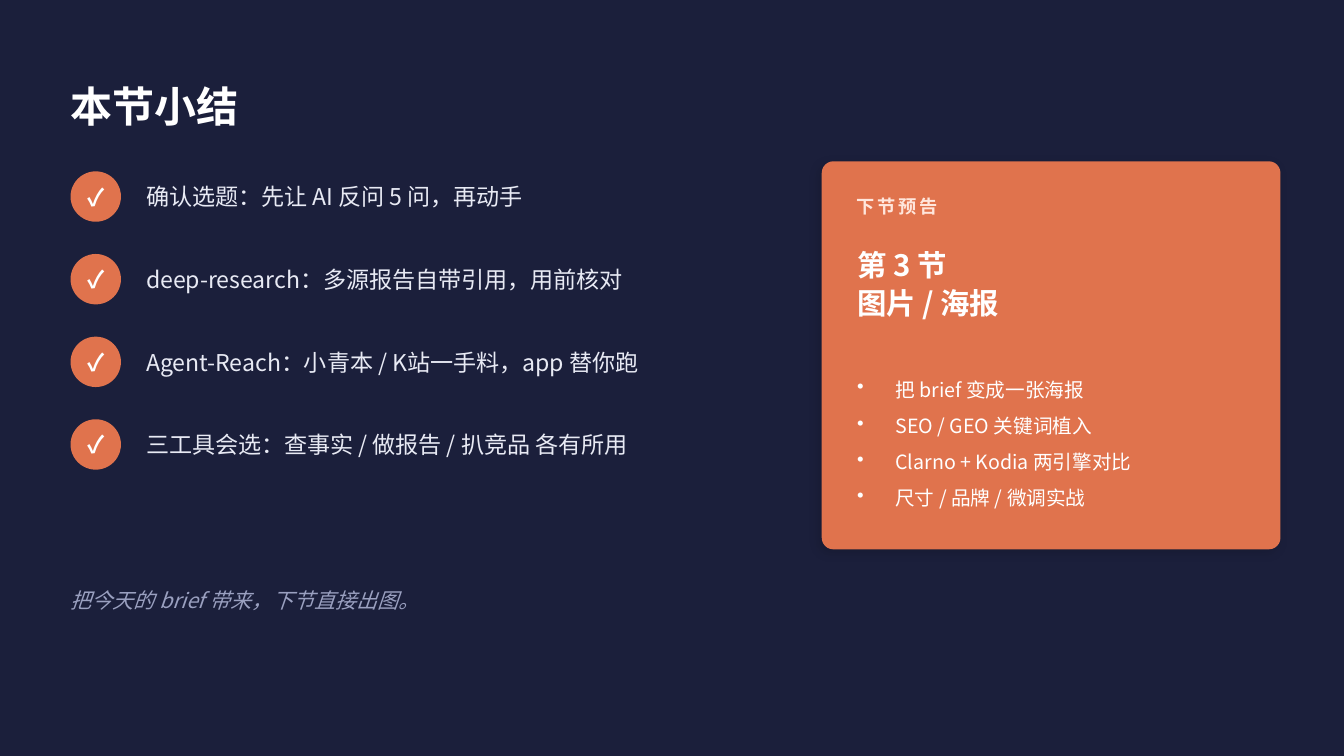
from dataclasses import dataclass

from lxml.etree import SubElement
from pptx import Presentation
from pptx.dml.color import RGBColor
from pptx.enum.shapes import MSO_SHAPE
from pptx.enum.text import MSO_ANCHOR, PP_ALIGN
from pptx.oxml.ns import qn
from pptx.util import Inches, Pt


@dataclass(frozen=True)
class Theme:
    font: str = "Noto Sans CJK SC"
    navy: str = "1B1F3B"
    coral: str = "E0734D"
    white: str = "FFFFFF"
    pale: str = "E8EAF4"
    peach: str = "FFE6DC"
    muted: str = "9AA0C0"
    shadow: str = "000000"
    title: float = 30
    heading: float = 21
    check: float = 17
    body: float = 16.5
    footer: float = 15
    bullet: float = 14
    label: float = 13


def write_text(tf, text, *, font, size, color, bold=False, italic=False, align=PP_ALIGN.LEFT,
               line=None, after=None, bullet=False, spacing=None):
    tf.word_wrap = True
    tf.vertical_anchor = MSO_ANCHOR.MIDDLE
    tf.margin_left = tf.margin_top = tf.margin_right = tf.margin_bottom = 0
    for i, words in enumerate(text.split("\n")):
        p = tf.add_paragraph() if i else tf.paragraphs[0]
        p.alignment = align
        if line:
            p.line_spacing = line
        if after:
            p.space_after = Pt(after)
        if bullet:
            pPr = p._p.get_or_add_pPr()
            pPr.set("marL", str(Inches(0.38)))
            pPr.set("indent", str(-Inches(0.38)))
            SubElement(pPr, qn("a:buChar"), char="•")
        r = p.add_run()
        r.text = words
        r.font.name = font
        r.font.size = Pt(size)
        r.font.bold = bold
        r.font.italic = italic
        r.font.color.rgb = RGBColor.from_string(color)
        rPr = r._r.get_or_add_rPr()
        SubElement(rPr, qn("a:ea"), typeface=font)
        if spacing:
            rPr.set("spc", str(spacing * 100))


class SlideBuilder:
    def __init__(self, s, theme):
        self.s = s
        self.theme = theme
        fill = s.background.fill
        fill.solid()
        fill.fore_color.rgb = RGBColor.from_string(theme.navy)

    def text(self, x, y, w, h, text, **style):
        box = self.s.shapes.add_textbox(Inches(x), Inches(y), Inches(w), Inches(h))
        write_text(box.text_frame, text, font=self.theme.font, **style)

    def shape(self, kind, x, y, w, h):
        sp = self.s.shapes.add_shape(kind, Inches(x), Inches(y), Inches(w), Inches(h))
        sp.fill.solid()
        sp.fill.fore_color.rgb = RGBColor.from_string(self.theme.coral)
        sp.line.fill.background()
        sp.shadow.inherit = False
        return sp

    def card(self, x, y, w, h):
        sp = self.shape(MSO_SHAPE.ROUNDED_RECTANGLE, x, y, w, h)
        sp.adjustments[0] = 0.03
        effects = sp._element.spPr.find(qn("a:effectLst"))
        shadow = SubElement(effects, qn("a:outerShdw"), blurRad=str(Pt(7)), dist=str(Pt(3)),
                            dir=str(135 * 60000), algn="ctr", rotWithShape="0")
        color = SubElement(shadow, qn("a:srgbClr"), val=self.theme.shadow)
        SubElement(color, qn("a:alpha"), val="12000")

    def check_item(self, x, y, text):
        t = self.theme
        sp = self.shape(MSO_SHAPE.OVAL, x, y, 0.5, 0.5)
        write_text(sp.text_frame, "✓", font=t.font, size=t.check, color=t.white, bold=True,
                   align=PP_ALIGN.CENTER)
        self.text(x + 0.75, y, 6.7, 0.5, text, size=t.body, color=t.pale)


def main():
    prs = Presentation()
    prs.slide_width = Inches(13.33)
    prs.slide_height = Inches(7.5)
    t = Theme()
    page = SlideBuilder(prs.slides.add_slide(prs.slide_layouts[6]), t)

    left = 0.7
    page.text(left, 0.7, 11, 0.7, "本节小结", size=t.title, color=t.white, bold=True)
    takeaways = [
        "确认选题：先让 AI 反问 5 问，再动手",
        "deep-research：多源报告自带引用，用前核对",
        "Agent-Reach：小青本 / K站一手料，app 替你跑",
        "三工具会选：查事实 / 做报告 / 扒竞品 各有所用",
    ]
    for i, takeaway in enumerate(takeaways):
        page.check_item(left, 1.7 + 0.82 * i, takeaway)

    page.card(8.15, 1.6, 4.55, 3.85)
    inner = 8.5
    page.text(inner, 1.85, 4, 0.4, "下节预告", size=t.label, color=t.peach, bold=True, spacing=2)
    page.text(inner, 2.3, 3.95, 1, "第 3 节\n图片 / 海报", size=t.heading, color=t.white,
              bold=True, line=1.08)
    topics = [
        "把 brief 变成一张海报",
        "SEO / GEO 关键词植入",
        "Clarno + Kodia 两引擎对比",
        "尺寸 / 品牌 / 微调实战",
    ]
    page.text(inner, 3.5, 3.95, 1.8, "\n".join(topics), size=t.bullet, color=t.white,
              bullet=True, after=9)

    page.text(left, 5.7, 7, 0.5, "把今天的 brief 带来，下节直接出图。", size=t.footer,
              color=t.muted, italic=True)
    prs.save("out.pptx")


if __name__ == "__main__":
    main()
